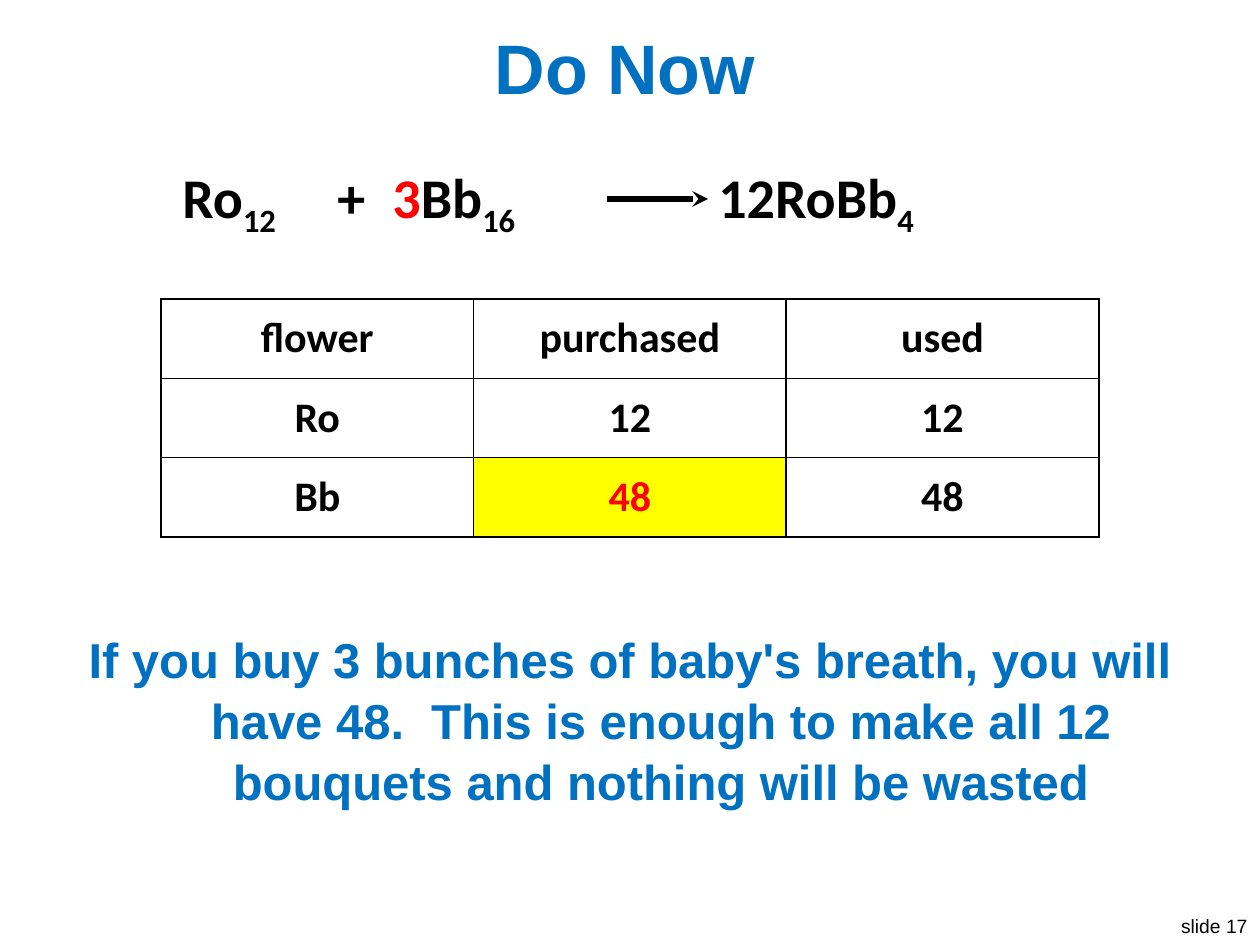
from lxml.etree import SubElement
from pptx import Presentation
from pptx.dml.color import RGBColor
from pptx.enum.shapes import MSO_CONNECTOR
from pptx.enum.text import MSO_ANCHOR, PP_ALIGN
from pptx.oxml.ns import qn
from pptx.util import Emu, Pt

PX = 914400 // 126
BLACK, BLUE, RED, YELLOW = "000000", "0070C0", "FF0000", "FFFF00"
FLOWERS = [
    ["flower", "purchased", "used"],
    ["Ro", "12", "12"],
    ["Bb", "48", "48"],
]
HIGHLIGHT = (2, 1)


def px(n):
    return Emu(n * PX)


def rgb(color):
    return RGBColor.from_string(color)


def add_run(p, text, size, font, color=BLACK, bold=True, baseline=0):
    r = p.add_run()
    r.text = text
    r.font.size = Pt(size)
    r.font.name = font
    r.font.bold = bold
    r.font.color.rgb = rgb(color)
    if baseline:
        r.font._element.set("baseline", str(baseline * 1000))


def add_text_box(s, box, align, anchor=MSO_ANCHOR.TOP, wrap=True):
    """Add an empty text box and return its first paragraph."""
    tf = s.shapes.add_textbox(*map(px, box)).text_frame
    tf.word_wrap = wrap
    tf.vertical_anchor = anchor
    p = tf.paragraphs[0]
    p.alignment = align
    return p


def set_hanging_indent(p, indent):
    pPr = p._p.get_or_add_pPr()
    pPr.set("marL", str(px(indent)))
    pPr.set("indent", str(px(-indent)))


def set_tabs(p, stops):
    tabs = SubElement(p._p.get_or_add_pPr(), qn("a:tabLst"))
    for stop in stops:
        SubElement(tabs, qn("a:tab"), pos=str(px(stop)), algn="l")


def add_equation(s):
    p = add_text_box(s, (170, 156, 920, 81), PP_ALIGN.LEFT)
    set_tabs(p, (155, 210, 536))
    for text, color, baseline in [
        ("Ro", BLACK, 0), ("12", BLACK, -25), ("\t+\t", BLACK, 0),
        ("3", RED, 0), ("Bb", BLACK, 0), ("16", BLACK, -25),
        ("\t12RoBb", BLACK, 0), ("4", BLACK, -25),
    ]:
        add_run(p, text, 32, "Calibri", color, baseline=baseline)


def add_arrow(s, x1, x2, y):
    line = s.shapes.add_connector(MSO_CONNECTOR.STRAIGHT, px(x1), px(y), px(x2), px(y))
    line.line.color.rgb = rgb(BLACK)
    line.line.width = Pt(3)
    SubElement(line.line._get_or_add_ln(), qn("a:tailEnd"), type="stealth")
    SubElement(line._element.spPr, qn("a:effectLst"))


def set_borders(cell):
    tcPr = cell._tc.get_or_add_tcPr()
    for side in ("lnL", "lnR", "lnT", "lnB"):
        ln = SubElement(tcPr, qn(f"a:{side}"), w=str(Pt(1)))
        fill = SubElement(ln, qn("a:solidFill"))
        SubElement(fill, qn("a:srgbClr"), val=BLACK)


def add_flower_table(s):
    rows, cols = len(FLOWERS), len(FLOWERS[0])
    box = map(px, (161, 299, 938, 238))
    table = s.shapes.add_table(rows, cols, *box).table
    table.first_row = table.horz_banding = False
    for i, row in enumerate(FLOWERS):
        for j, text in enumerate(row):
            cell = table.cell(i, j)
            cell.vertical_anchor = MSO_ANCHOR.MIDDLE
            set_borders(cell)
            marked = (i, j) == HIGHLIGHT
            if marked:
                cell.fill.solid()
                cell.fill.fore_color.rgb = rgb(YELLOW)
            else:
                cell.fill.background()
            p = cell.text_frame.paragraphs[0]
            p.alignment = PP_ALIGN.CENTER
            add_run(p, text, 24, "Calibri", RED if marked else BLACK)


def main():
    prs = Presentation()
    prs.slide_width, prs.slide_height = px(1260), px(945)
    s = prs.slides.add_slide(prs.slide_layouts[6])

    p = add_text_box(s, (1166, 908, 94, 37), PP_ALIGN.RIGHT, wrap=False)
    add_run(p, "slide 17", 11, "Arial", bold=False)

    p = add_text_box(s, (12, 11, 1226, 111), PP_ALIGN.CENTER, MSO_ANCHOR.MIDDLE)
    add_run(p, "Do Now", 40, "Arial", BLUE)

    p = add_text_box(s, (74, 621, 1112, 190), PP_ALIGN.CENTER)
    set_hanging_indent(p, 62)
    p.line_spacing = 1.04
    add_run(p, "If you buy 3 bunches of baby's breath, you will have 48.  This is "
               "enough to make all 12 bouquets and nothing will be wasted",
            28, "Arial", BLUE)

    add_flower_table(s)
    add_equation(s)
    add_arrow(s, 607, 708, 199)
    prs.save("out.pptx")


if __name__ == "__main__":
    main()
